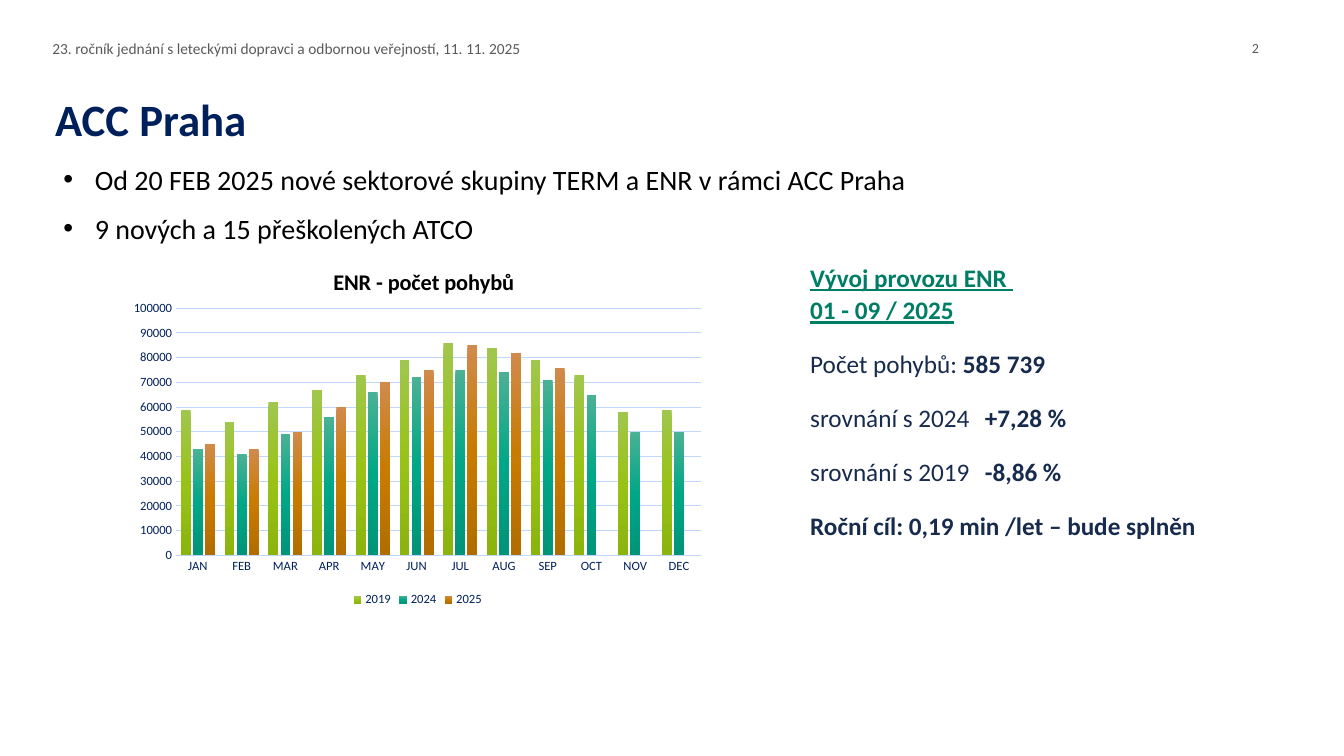
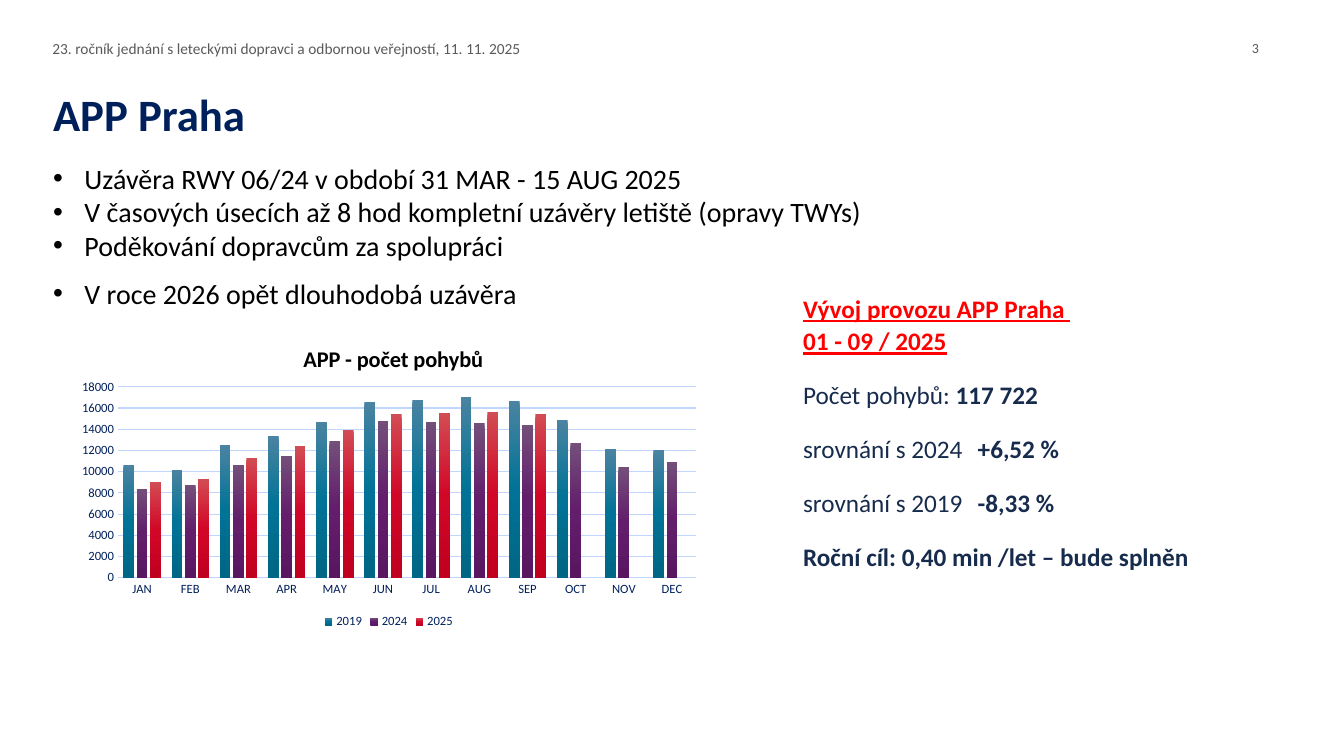
from copy import deepcopy

from lxml.etree import SubElement
from pptx import Presentation
from pptx.chart.data import CategoryChartData
from pptx.dml.color import RGBColor
from pptx.enum.chart import XL_CHART_TYPE, XL_LEGEND_POSITION, XL_TICK_MARK
from pptx.oxml.ns import qn
from pptx.util import Cm, Pt

FONT = "Calibri"
COLORS = {
    "header": "5A5A5A",
    "navy": "00205B",
    "text": "172B4D",
    "black": "000000",
    "grid": "C0D6FF",
    "green": "007D65",
    "red": "FF0000",
}
HEADER = "23. ročník jednání s\u00a0leteckými dopravci a odbornou veřejností, 11. 11. 2025"
MONTHS = ["JAN", "FEB", "MAR", "APR", "MAY", "JUN",
          "JUL", "AUG", "SEP", "OCT", "NOV", "DEC"]
YEARS = ["2019", "2024", "2025"]

# Boxes are (left, top, width, height) in cm; plot areas are fractions of the chart.
SLIDES = [
    {
        "number": "2",
        "title": "ACC Praha",
        "title_box": (1.14, 2.34, 23.9, 1.57),
        "bullets_box": (1.35, 3.96, 24.36, 2.36),
        "bullets": [
            ("Od 20 FEB 2025 nové sektorové skupiny TERM a ENR v rámci ACC Praha", 0),
            ("9 nových a 15 přeškolených ATCO", 11),
        ],
        "summary_box": (20.17, 6.43, 10.62, 8.69),
        "summary_color": "green",
        "summary_title": "Vývoj provozu ENR \v01 - 09 / 2025",
        "figures": ["585 739", "+7,28 %", "-8,86 %"],
        "target": "Roční cíl: 0,19 min /let – bude splněn",
        "chart_box": (3.1, 6.15, 14.86, 9.25),
        "chart_title": "ENR - počet pohybů",
        "title_place": {"x": 0.35, "y": 0.05},
        "plot_place": {"x": 0.09, "y": 0.175, "w": 0.89, "h": 0.673},
        "axis": (100000, 10000),
        "values": [
            [59000, 54000, 62000, 67000, 73000, 79000,
             86000, 84000, 79000, 73000, 58000, 59000],
            [43000, 41000, 49000, 56000, 66000, 72000,
             75000, 74000, 71000, 65000, 50000, 50000],
            [45000, 43000, 50000, 60000, 70000, 75000,
             85000, 82000, 76000, None, None, None],
        ],
        "gradients": [
            ["A1C64E", "98C316", "8BB40D"],
            ["4BB194", "00A787", "009478"],
            ["D08A4B", "C87B00", "B26D00"],
        ],
    },
    {
        "number": "3",
        "title": "APP Praha",
        "title_box": (1.09, 2.21, 23.9, 1.73),
        "bullets_box": (1.09, 3.94, 21.84, 4.01),
        "bullets": [
            ("Uzávěra RWY 06/24 v období 31 MAR - 15 AUG 2025", 0),
            ("V časových úsecích až 8 hod kompletní uzávěry letiště (opravy TWYs)", 0),
            ("Poděkování dopravcům za spolupráci", 0),
            ("V roce 2026 opět dlouhodobá uzávěra", 10),
        ],
        "summary_box": (19.99, 7.21, 11.4, 8.74),
        "summary_color": "red",
        "summary_title": "Vývoj provozu APP Praha \v01 - 09 / 2025",
        "figures": ["117 722", "+6,52 %", "-8,33 %"],
        "target": "Roční cíl: 0,40 min /let – bude splněn",
        "chart_box": (1.75, 8.1, 16.1, 7.85),
        "chart_title": "APP - počet pohybů",
        "title_place": {"x": 0.36, "y": 0.06},
        "plot_place": {"x": 0.076, "y": 0.21, "w": 0.905, "h": 0.613},
        "axis": (18000, 2000),
        "values": [
            [10600, 10200, 12500, 13400, 14700, 16600,
             16800, 17000, 16700, 14900, 12100, 12000],
            [8400, 8700, 10600, 11500, 12900, 14800,
             14700, 14600, 14400, 12700, 10400, 10900],
            [9000, 9300, 11300, 12400, 13900, 15400,
             15500, 15600, 15400, None, None, None],
        ],
        "gradients": [
            ["4B83A2", "007396", "006685"],
            ["744F7A", "621D6B", "591762"],
            ["D24C54", "D10728", "C0001F"],
        ],
    },
]


def style(font, size, color, bold=False, underline=False):
    font.name = FONT
    font.size = Pt(size)
    font.color.rgb = RGBColor.from_string(COLORS[color])
    font.bold = bold
    if underline:
        font.underline = True


def place(element, index, fractions):
    """Give a chart title or plot area a fixed place within its chart."""
    for old_layout in element.findall(qn("c:layout")):
        element.remove(old_layout)
    layout = element.makeelement(qn("c:layout"))
    element.insert(index, layout)
    manual = SubElement(layout, qn("c:manualLayout"))
    if "w" in fractions:
        SubElement(manual, qn("c:layoutTarget")).set("val", "inner")
    for side in ("x", "y"):
        SubElement(manual, qn(f"c:{side}Mode")).set("val", "edge")
    for side, value in fractions.items():
        SubElement(manual, qn(f"c:{side}")).set("val", str(value))


presentation = Presentation()
presentation.slide_width = Cm(33.87)
presentation.slide_height = Cm(19.05)

for content in SLIDES:
    slide = presentation.slides.add_slide(presentation.slide_layouts[6])
    frames = {}
    for name, box in (
        ("number", (31.55, 0.86, 2.16, 0.69)),
        ("header", (1.07, 0.86, 29.74, 1.19)),
        ("title", content["title_box"]),
        ("summary", content["summary_box"]),
        ("bullets", content["bullets_box"]),
    ):
        frames[name] = slide.shapes.add_textbox(*map(Cm, box)).text_frame
        frames[name].word_wrap = True

    # Header, number and title
    frames["number"].margin_left = frames["number"].margin_right = 0
    for name, text, size, color, bold in (
        ("number", content["number"], 10, "header", False),
        ("header", HEADER, 11, "header", False),
        ("title", content["title"], 32, "navy", True),
    ):
        frames[name].text = text
        style(frames[name].paragraphs[0].runs[0].font, size, color, bold)
    frames["title"].paragraphs[0].line_spacing = 0.9

    # Bullets
    frames["bullets"].text = "\n".join(text for text, _ in content["bullets"])
    for paragraph, (_, space) in zip(frames["bullets"].paragraphs, content["bullets"]):
        if space:
            paragraph.space_before = Pt(space)
        properties = paragraph._p.get_or_add_pPr()
        properties.set("marL", str(Cm(0.79)))
        properties.set("indent", str(-Cm(0.79)))
        SubElement(properties, qn("a:buFont")).set("typeface", "Arial")
        SubElement(properties, qn("a:buChar")).set("char", "•")
        style(paragraph.runs[0].font, 20, "black")

    # Summary: heading, three figures and the yearly target
    labels = ["Počet pohybů:\u00a0", "srovnání s 2024\t", "srovnání s 2019\t"]
    summary = frames["summary"]
    summary.text = "\n".join([content["summary_title"], *labels, content["target"]])
    heading, *figure_paragraphs, target = summary.paragraphs
    for paragraph in summary.paragraphs:
        paragraph.line_spacing = 1.07
        paragraph.space_after = Pt(8)
        if paragraph is not heading:
            paragraph.space_before = Pt(7.5)
    for run in heading.runs:
        style(run.font, 18, content["summary_color"], True, True)
    for paragraph, figure in zip(figure_paragraphs, content["figures"]):
        tabs = SubElement(paragraph._p.get_or_add_pPr(), qn("a:tabLst"))
        SubElement(tabs, qn("a:tab"), pos=str(Cm(4.4)), algn="l")
        style(paragraph.runs[0].font, 18, "text")
        run = paragraph.add_run()
        run.text = figure
        style(run.font, 18, "text", True)
    style(target.runs[0].font, 18, "text", True)

    # Monthly movements
    chart_data = CategoryChartData()
    chart_data.categories = MONTHS
    for year, values in zip(YEARS, content["values"]):
        chart_data.add_series(year, values)
    chart = slide.shapes.add_chart(
        XL_CHART_TYPE.COLUMN_CLUSTERED, *map(Cm, content["chart_box"]), chart_data
    ).chart
    style(chart.font, 10, "black")

    chart.has_title = True
    chart.chart_title.text_frame.text = content["chart_title"]
    style(chart.chart_title.text_frame.paragraphs[0].runs[0].font, 16, "black", True)
    place(chart.chart_title._element, 1, content["title_place"])
    place(chart._chartSpace.chart.plotArea, 0, content["plot_place"])

    chart.has_legend = True
    chart.legend.position = XL_LEGEND_POSITION.BOTTOM
    chart.legend.include_in_layout = False
    style(chart.legend.font, 9, "navy")

    category_axis, value_axis = chart.category_axis, chart.value_axis
    for axis in (category_axis, value_axis):
        axis.major_tick_mark = axis.minor_tick_mark = XL_TICK_MARK.NONE
        style(axis.tick_labels.font, 9, "navy")
    value_axis.minimum_scale = 0
    value_axis.maximum_scale, value_axis.major_unit = content["axis"]
    value_axis.format.line.fill.background()
    for line in (category_axis.format.line, value_axis.major_gridlines.format.line):
        line.color.rgb = RGBColor.from_string(COLORS["grid"])
        line.width = Pt(0.75)

    plot = chart.plots[0]
    plot.gap_width = 100
    plot.overlap = -24
    plot.vary_by_categories = False
    for series, gradient in zip(plot.series, content["gradients"]):
        series.invert_if_negative = False
        fill = series.format.fill
        fill.gradient()
        fill.gradient_angle = 270
        stop_list = series._element.find(".//" + qn("a:gsLst"))
        stop_list.append(deepcopy(stop_list[0]))
        for stop, position, color in zip(fill.gradient_stops, (0, 0.5, 1), gradient):
            stop.position = position
            stop.color.rgb = RGBColor.from_string(color)

presentation.save("out.pptx")
